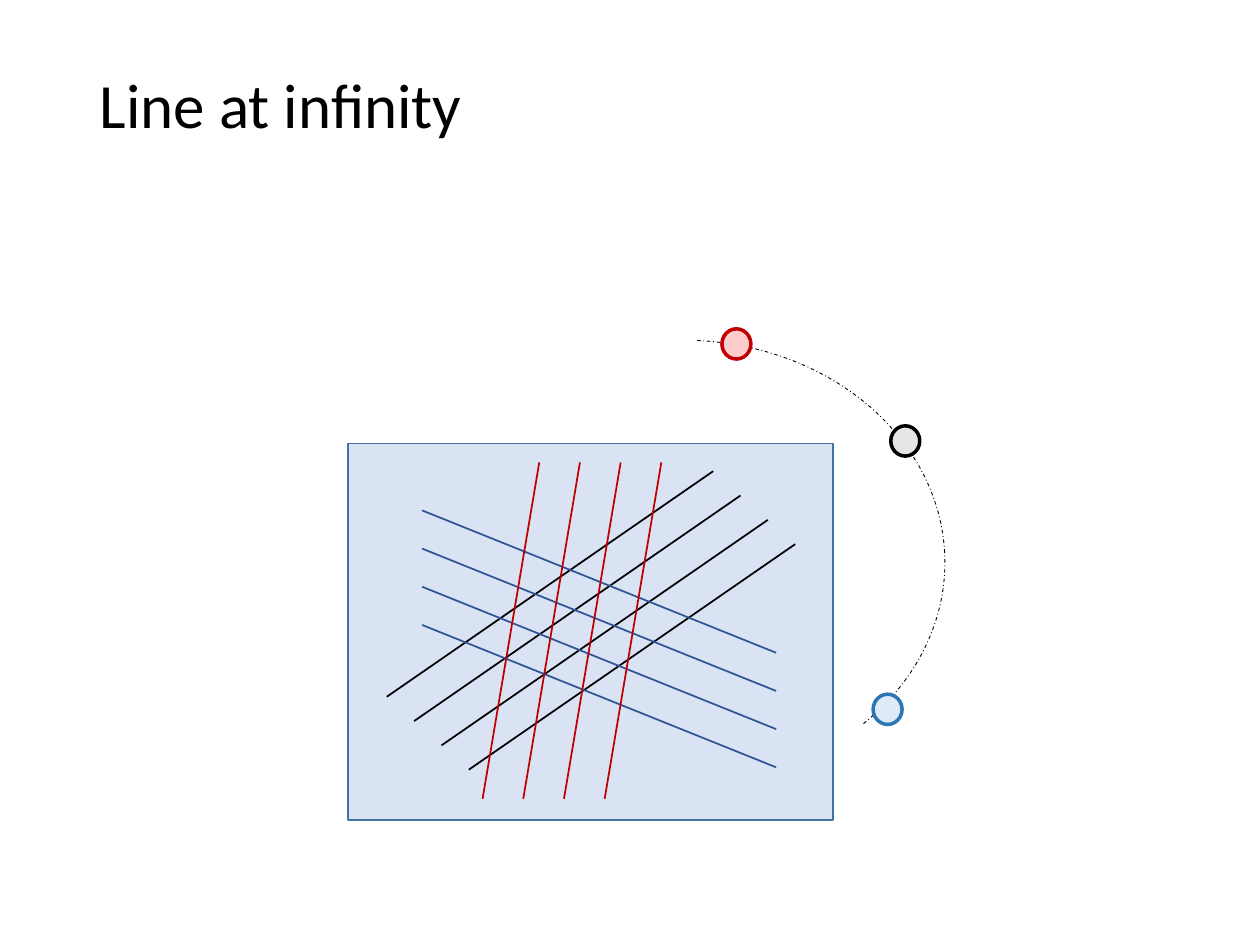
from lxml.etree import SubElement
from pptx import Presentation
from pptx.dml.color import RGBColor
from pptx.enum.dml import MSO_LINE
from pptx.enum.shapes import MSO_CONNECTOR, MSO_SHAPE
from pptx.enum.text import MSO_ANCHOR, PP_ALIGN
from pptx.oxml.ns import qn
from pptx.util import Inches, Pt

COLORS = {
    "black": "000000",
    "red": "C00000",
    "blue": "2F5597",
    "plane": "DAE3F3",
    "plane_edge": "43739E",
    "blue_dot": "DEEBF7",
    "blue_dot_edge": "2E75B6",
    "red_dot": "FFCCCC",
    "gray_dot": "E7E6E6",
}
LINES_PER_FAMILY = 4

# Parallel families: first line's start and end, step to the next line, colour
FAMILIES = [
    ((3.07, 5.53), (5.66, 3.74), (0.217, 0.193), "black"),
    ((6.16, 6.09), (3.35, 4.96), (0, -0.303), "blue"),
    ((3.83, 6.34), (4.28, 3.67), (0.323, 0), "red"),
]

# Points at infinity: left, top, fill, outline
POINTS = [
    (6.93, 5.51, "blue_dot", "blue_dot_edge"),
    (5.73, 2.61, "red_dot", "red"),
    (7.07, 3.38, "gray_dot", "black"),
]


def rgb(name):
    return RGBColor.from_string(COLORS[name])


def set_text(sp, text, size=36, font="Calibri", color="black", spacing=0.9):
    tf = sp.text_frame
    tf.word_wrap = True
    tf.vertical_anchor = MSO_ANCHOR.MIDDLE
    p = tf.paragraphs[0]
    p.alignment = PP_ALIGN.LEFT
    p.line_spacing = spacing
    r = p.add_run()
    r.text = text
    r.font.size = Pt(size)
    r.font.name = font
    r.font.color.rgb = rgb(color)


def add_title(s, text, box):
    sp = s.shapes.title
    sp.left, sp.top, sp.width, sp.height = map(Inches, box)
    set_text(sp, text)


def add_outlined(shapes, kind, box, line, width, fill=None):
    sp = shapes.add_shape(kind, *map(Inches, box))
    sp.shadow.inherit = False
    if fill:
        sp.fill.solid()
        sp.fill.fore_color.rgb = rgb(fill)
    else:
        sp.fill.background()
    sp.line.color.rgb = rgb(line)
    sp.line.width = Pt(width)
    return sp


def add_line(shapes, start, end, color):
    line = shapes.add_connector(MSO_CONNECTOR.STRAIGHT, *map(Inches, start + end))
    line.line.color.rgb = rgb(color)
    line.line.width = Pt(1)
    SubElement(line._element.spPr, qn("a:effectLst"))


def add_family(shapes, start, end, step, color):
    for i in range(LINES_PER_FAMILY):
        dx, dy = i * step[0], i * step[1]
        add_line(shapes, (start[0] + dx, start[1] + dy),
                 (end[0] + dx, end[1] + dy), color)


def main():
    prs = Presentation()
    prs.slide_width, prs.slide_height = Inches(10), Inches(7.5)
    s = prs.slides.add_slide(prs.slide_layouts[5])
    add_title(s, "Line at infinity", (0.69, 0.41, 8.62, 0.9))

    # Line at infinity
    arc = add_outlined(s.shapes, MSO_SHAPE.ARC, (3.34, 2.7, 4.16, 3.53), "black", 0.5)
    arc.adjustments[0] = 164.2
    arc.adjustments[1] = 25.16
    arc.line.dash_style = MSO_LINE.DASH_DOT

    # Plane with its families of parallel lines
    plane = s.shapes.add_group_shape()
    add_outlined(plane.shapes, MSO_SHAPE.RECTANGLE, (2.76, 3.52, 3.85, 2.99),
                 "plane_edge", 1, "plane")
    for family in FAMILIES:
        add_family(plane.shapes, *family)

    # Points where the parallel lines meet
    for left, top, fill, edge in POINTS:
        add_outlined(s.shapes, MSO_SHAPE.OVAL, (left, top, 0.23, 0.24), edge, 2, fill)

    prs.save("out.pptx")


if __name__ == "__main__":
    main()
